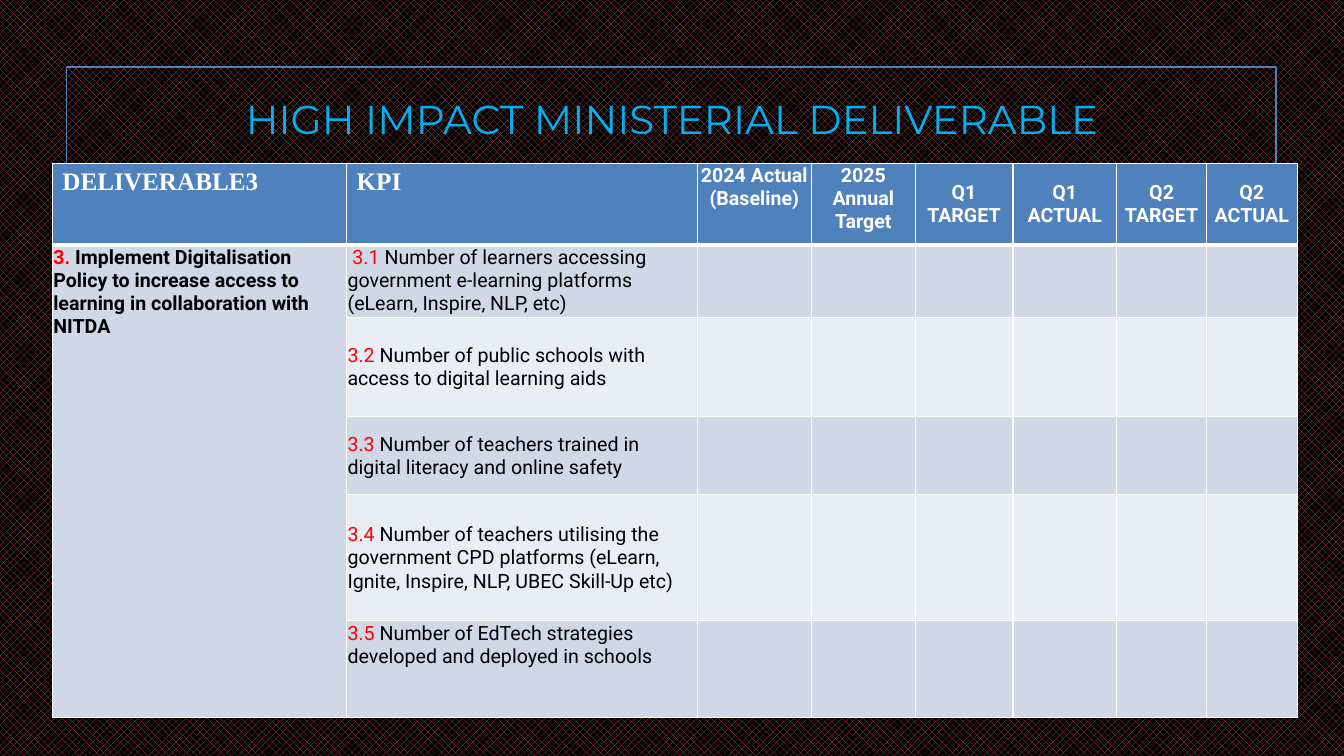
from lxml import etree
from pptx import Presentation
from pptx.dml.color import RGBColor
from pptx.enum.dml import MSO_PATTERN
from pptx.enum.shapes import MSO_SHAPE
from pptx.enum.text import MSO_ANCHOR, PP_ALIGN
from pptx.oxml.ns import qn
from pptx.util import Pt

BLUE, WHITE, BLACK, RED = "4F81BD", "FFFFFF", "000000", "FF0000"
BANDS = ["D0D8E8", "E9EDF4"]
COLUMN_WIDTHS = [210.2, 250.6, 81.4, 74.2, 69.8, 74.2, 64.1, 64.8]
ROW_HEIGHTS = [58.3, 51.8, 70.6, 56.2, 90, 69.1]
HEADINGS = ["DELIVERABLE3", "KPI", "2024 Actual (Baseline)", "2025 Annual Target",
            "Q1 TARGET", "Q1 ACTUAL", "Q2 TARGET", "Q2 ACTUAL"]
DELIVERABLE = ("3. ", "Implement Digitalisation Policy to increase access to learning "
               "in collaboration with NITDA")
KPIS = [
    ("3.1", " Number of learners accessing government e-learning platforms (eLearn, Inspire, NLP, etc)"),
    ("3.2", " Number of public schools with access to digital learning aids"),
    ("3.3", " Number of teachers trained in digital literacy and online safety"),
    ("3.4", " Number of teachers utilising the government CPD platforms "
            "(eLearn, Ignite, Inspire, NLP, UBEC Skill-Up etc)"),
    ("3.5", " Number of EdTech strategies developed and deployed in schools"),
]


def color(hex_code):
    """Turn a hex string into a colour."""
    return RGBColor.from_string(hex_code)


def add_run(paragraph, text, hex_code, size=14, font="Roboto", bold=False):
    """Append one formatted run to a paragraph."""
    run = paragraph.add_run()
    run.text = text
    run.font.size, run.font.name, run.font.bold = Pt(size), font, bold
    run.font.color.rgb = color(hex_code)


def style_cell(cell, fill, top=1, bottom=1):
    """Give a cell white borders and a plain fill."""
    properties = cell._tc.get_or_add_tcPr()
    for side, width in (("L", 1), ("R", 1), ("T", top), ("B", bottom)):
        border = etree.SubElement(properties, qn("a:ln" + side), w=str(Pt(width)))
        solid = etree.SubElement(border, qn("a:solidFill"))
        etree.SubElement(solid, qn("a:srgbClr"), val=WHITE)
    cell.fill.solid()
    cell.fill.fore_color.rgb = color(fill)


def tighten(cell, anchor):
    """Set narrow margins and the vertical anchor of a cell."""
    cell.margin_left = cell.margin_right = cell.margin_top = Pt(0.7)
    cell.margin_bottom = 0
    cell.vertical_anchor = anchor


def add_background(slide):
    """Fill the background with a dark two-colour pattern."""
    fill = slide.background.fill
    fill.patterned()
    fill.pattern = MSO_PATTERN.PERCENT_50
    fill.fore_color.rgb = color("C0504D")
    fill.back_color.rgb = color(BLACK)


def add_frame(slide, left, top, width, height):
    """Draw the thin outline behind the content."""
    frame = slide.shapes.add_shape(MSO_SHAPE.RECTANGLE, Pt(left), Pt(top), Pt(width), Pt(height))
    frame.shadow.inherit = False
    frame.fill.background()
    frame.line.color.rgb = color(BLUE)
    frame.line.width = Pt(1.25)


def add_title(slide, left, top, width, height):
    """Place the centred slide title."""
    title = slide.shapes.add_textbox(Pt(left), Pt(top), Pt(width), Pt(height)).text_frame
    title.word_wrap = True
    title.vertical_anchor = MSO_ANCHOR.MIDDLE
    title.paragraphs[0].alignment = PP_ALIGN.CENTER
    add_run(title.paragraphs[0], "HIGH IMPACT MINISTERIAL DELIVERABLE", "00B0F0", 28.8, "Montserrat")


def fill_headings(table):
    """Write the heading row."""
    for column, heading in enumerate(HEADINGS):
        cell = table.cell(0, column)
        style_cell(cell, BLUE, bottom=3)
        paragraph = cell.text_frame.paragraphs[0]
        if column < 2:
            add_run(paragraph, heading, WHITE, 18, "Times New Roman", True)
        else:
            tighten(cell, MSO_ANCHOR.TOP if column < 4 else MSO_ANCHOR.MIDDLE)
            paragraph.alignment = PP_ALIGN.CENTER
            add_run(paragraph, heading, WHITE, bold=True)


def fill_kpis(table):
    """Write the deliverable and its indicators."""
    for row, (number, indicator) in enumerate(KPIS, 1):
        for column in range(len(HEADINGS)):
            band = BANDS[(row - 1) % 2] if column else BANDS[0]
            style_cell(table.cell(row, column), band, top=3 if row == 1 else 1)
        cell = table.cell(row, 1)
        tighten(cell, MSO_ANCHOR.TOP if row in (1, len(KPIS)) else MSO_ANCHOR.MIDDLE)
        paragraph = cell.text_frame.paragraphs[0]
        if row == 1:
            add_run(paragraph, " ", BLACK)
        add_run(paragraph, number, RED)
        add_run(paragraph, indicator, BLACK)
    deliverable = table.cell(1, 0)
    deliverable.merge(table.cell(len(KPIS), 0))
    tighten(deliverable, MSO_ANCHOR.TOP)
    for text, hex_code in zip(DELIVERABLE, (RED, BLACK)):
        add_run(deliverable.text_frame.paragraphs[0], text, hex_code, bold=True)


def add_kpi_table(slide, left, top):
    """Place the table of deliverable indicators."""
    table = slide.shapes.add_table(
        len(ROW_HEIGHTS), len(COLUMN_WIDTHS), Pt(left), Pt(top),
        Pt(sum(COLUMN_WIDTHS)), Pt(sum(ROW_HEIGHTS))).table
    for column, width in zip(table.columns, COLUMN_WIDTHS):
        column.width = Pt(width)
    for row, height in zip(table.rows, ROW_HEIGHTS):
        row.height = Pt(height)
    fill_headings(table)
    fill_kpis(table)


def main():
    """Build and save the slide."""
    deck = Presentation()
    deck.slide_width, deck.slide_height = Pt(960), Pt(540)
    slide = deck.slides.add_slide(deck.slide_layouts[6])
    add_background(slide)
    add_frame(slide, 47.5, 48, 864, 444)
    add_title(slide, 102, 52.5, 756, 64)
    add_kpi_table(slide, 37.4, 116.6)
    deck.save("out.pptx")


if __name__ == "__main__":
    main()
